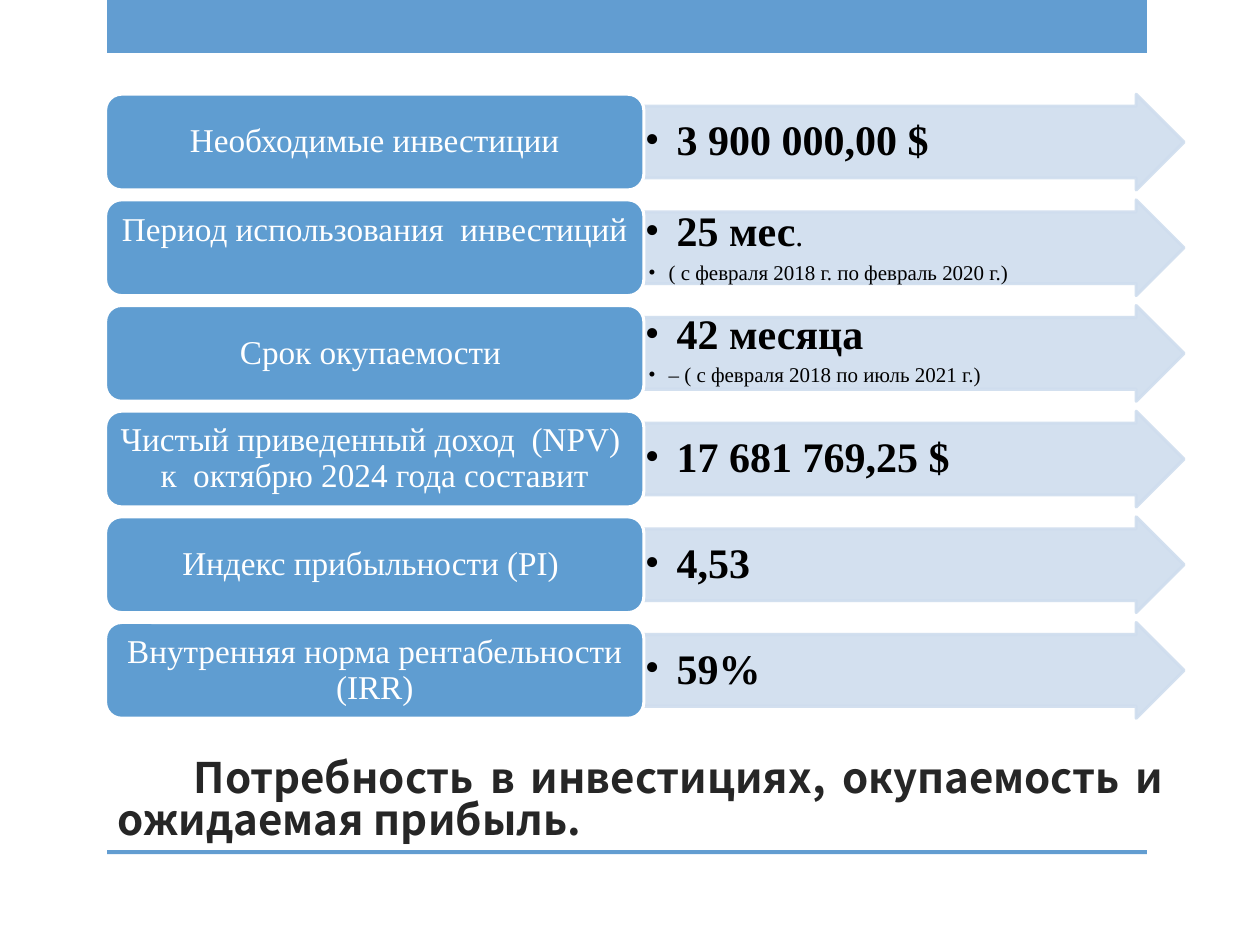
from dataclasses import dataclass

from lxml import etree
from pptx import Presentation
from pptx import util as u
from pptx.dml.color import RGBColor
from pptx.enum import shapes, text
from pptx.oxml.ns import qn


@dataclass(frozen=True)
class Theme:
    bar: str = "629DD1"
    label: str = "5F9DD1"
    arrow: str = "CFDDEE"
    white: str = "FFFFFF"
    black: str = "000000"
    title: str = "262626"
    body_font: str = "Times New Roman"
    title_font: str = "Noto Sans CJK KR"
    value_size: float = 24
    suffix_size: float = 18
    label_size: float = 19
    note_size: float = 12
    title_size: float = 24
    outline: float = 1.75


@dataclass(frozen=True)
class Metric:
    label: str
    value: str
    suffix: str = ""
    note: str = ""
    label_bottom: float = 0.1
    value_bottom: float = 0.05


T = Theme()
METRICS = [
    Metric("Необходимые инвестиции", "3 900 000,00 $"),
    Metric("Период использования  инвестиций", "25 мес", ".",
           "( с февраля 2018 г. по февраль 2020 г.)", label_bottom=0.79),
    Metric("Срок окупаемости ", "42 месяца",
           note="– ( c февраля 2018 по июль 2021 г.)", value_bottom=0.18),
    Metric("Чистый приведенный доход  (NPV)  к  октябрю 2024 года составит",
           "17 681 769,25 $"),
    Metric("Индекс прибыльности (PI) ", "4,53"),
    Metric("Внутренняя норма рентабельности (IRR)", "59%"),
]
LEFT, TOP, PITCH, ROW_H = 2.13, 1.9, 2.13, 1.93
LABEL_W, ARROW_LEFT, ARROW_W = 10.85, 12.95, 10.92
BAR_LEFT, BAR_W = 2.16, 20.96


def add_run(p, content: str, *, size: float, color: str = T.black,
            bold: bool = False, font: str = T.body_font) -> None:
    r = p.add_run()
    r.text = content
    r.font.name, r.font.size, r.font.bold = font, u.Pt(size), bold
    r.font.color.rgb = RGBColor.from_string(color)


def set_frame(tf, left: float, top: float, right: float, bottom: float,
              anchor=text.MSO_ANCHOR.MIDDLE) -> None:
    tf.word_wrap = True
    tf.auto_size = text.MSO_AUTO_SIZE.NONE
    tf.vertical_anchor = anchor
    tf.margin_left, tf.margin_top = u.Cm(left), u.Cm(top)
    tf.margin_right, tf.margin_bottom = u.Cm(right), u.Cm(bottom)


def set_bullet(p, margin: float, hang: float) -> None:
    pPr = p._p.get_or_add_pPr()
    pPr.set("marL", str(u.Cm(margin)))
    pPr.set("indent", str(-u.Cm(hang)))
    etree.SubElement(pPr, qn("a:buFont")).set("typeface", T.body_font)
    etree.SubElement(pPr, qn("a:buChar")).set("char", "•")


def add_box(s, kind, left: float, top: float, width: float, height: float,
            fill: str, line: str | None = None):
    sp = s.shapes.add_shape(kind, *map(u.Cm, (left, top, width, height)))
    sp.shadow.inherit = False
    sp.fill.solid()
    sp.fill.fore_color.rgb = RGBColor.from_string(fill)
    if line:
        sp.line.color.rgb = RGBColor.from_string(line)
        sp.line.width = u.Pt(T.outline)
    else:
        sp.line.fill.background()
    return sp


def set_opacity(sp, percent: int) -> None:
    """Apply one opacity to both the fill and the outline."""
    for clr in sp._element.spPr.iter(qn("a:srgbClr")):
        etree.SubElement(clr, qn("a:alpha")).set("val", str(percent * 1000))


def add_arrow(s, m: Metric, top: float) -> None:
    sp = add_box(s, shapes.MSO_SHAPE.RIGHT_ARROW, ARROW_LEFT, top,
                 ARROW_W, ROW_H, T.arrow, T.arrow)
    sp.adjustments[0], sp.adjustments[1] = 0.75, 0.5
    set_opacity(sp, 90)
    tf = sp.text_frame
    set_frame(tf, 0.05, 0.05, 0.05, m.value_bottom)
    p = tf.paragraphs[0]
    p.alignment, p.line_spacing = text.PP_ALIGN.LEFT, 0.9
    set_bullet(p, 0.64, 0.64)
    add_run(p, m.value, size=T.value_size, bold=True)
    if m.suffix:
        add_run(p, m.suffix, size=T.suffix_size)
    if m.note:
        p = tf.add_paragraph()
        p.alignment, p.line_spacing = text.PP_ALIGN.LEFT, 0.9
        p.space_before = u.Pt(3.6)
        set_bullet(p, 0.48, 0.41)
        add_run(p, m.note, size=T.note_size)


def add_label(s, m: Metric, top: float) -> None:
    sp = add_box(s, shapes.MSO_SHAPE.ROUNDED_RECTANGLE, LEFT, top,
                 LABEL_W, ROW_H, T.label, T.white)
    set_frame(sp.text_frame, 0.15, 0.1, 0.15, m.label_bottom)
    p = sp.text_frame.paragraphs[0]
    p.alignment, p.line_spacing = text.PP_ALIGN.CENTER, 0.9
    add_run(p, m.label, size=T.label_size, color=T.white)


def format_title(sp, content: str) -> None:
    sp.left, sp.top, sp.width, sp.height = map(u.Cm, (2.11, 14.73, 21.59, 2.41))
    set_frame(sp.text_frame, 0.25, 0.13, 0.25, 0.13, text.MSO_ANCHOR.BOTTOM)
    p = sp.text_frame.paragraphs[0]
    p.alignment, p.line_spacing = text.PP_ALIGN.JUSTIFY, 0.83
    p._p.get_or_add_pPr().set("indent", str(u.Cm(1.55)))
    add_run(p, content, size=T.title_size, color=T.title, bold=True,
            font=T.title_font)


def main() -> None:
    prs = Presentation()
    prs.slide_width, prs.slide_height = u.Cm(25.4), u.Cm(19.05)
    s = prs.slides.add_slide(prs.slide_layouts[5])
    format_title(s.shapes.title,
                 "Потребность в инвестициях, окупаемость и ожидаемая прибыль.")
    for top, height in ((0, 1.07), (17.14, 0.08)):
        add_box(s, shapes.MSO_SHAPE.RECTANGLE, BAR_LEFT, top, BAR_W, height, T.bar)
    for i, m in enumerate(METRICS):
        top = TOP + i * PITCH
        add_arrow(s, m, top)
        add_label(s, m, top)
    prs.save("out.pptx")


if __name__ == "__main__":
    main()
